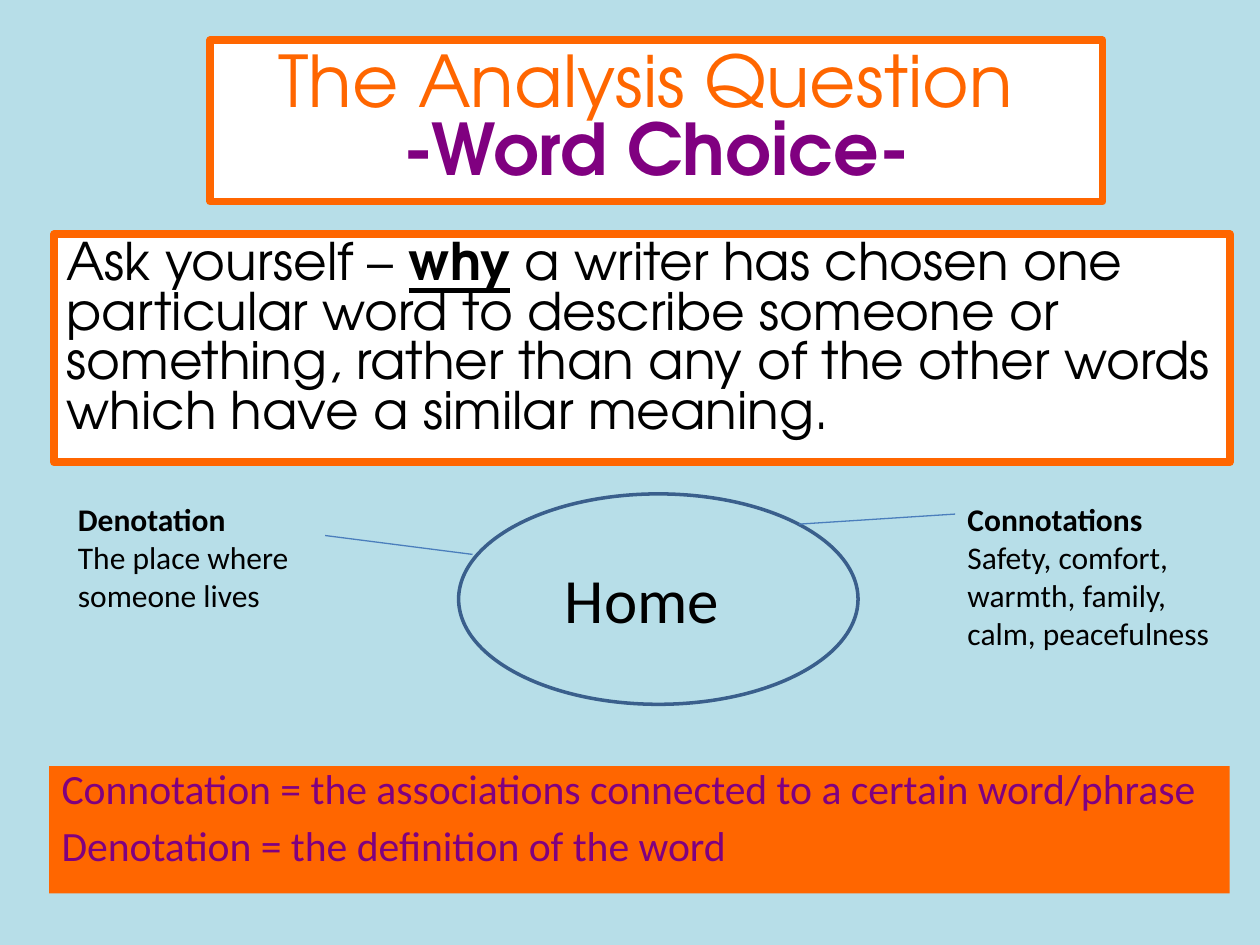
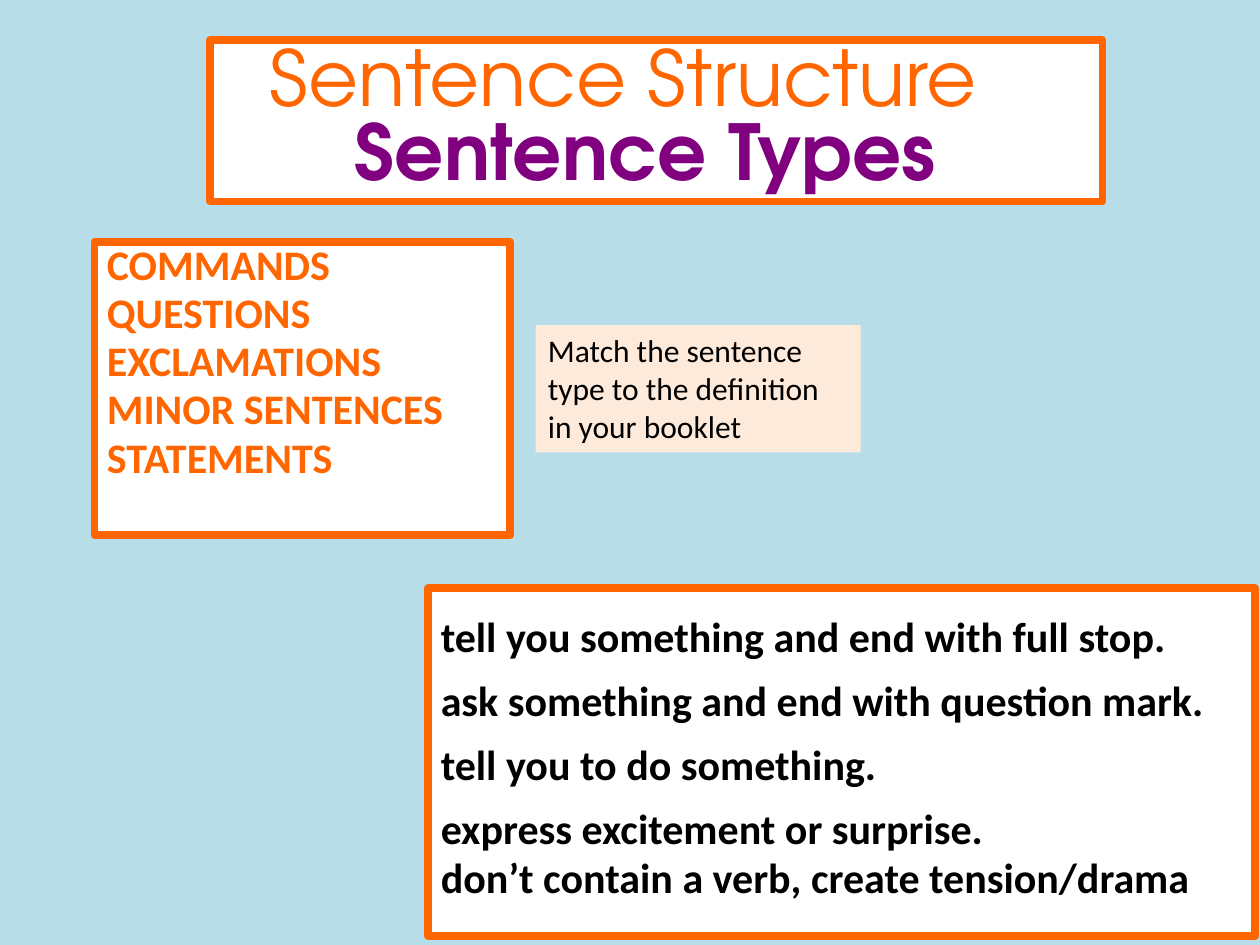
"""Two lesson slides on word choice and sentence types."""
from pptx import Presentation
from pptx.dml.color import RGBColor
from pptx.enum.shapes import MSO_CONNECTOR, MSO_SHAPE
from pptx.enum.text import MSO_ANCHOR, PP_ALIGN
from pptx.oxml.ns import qn
from pptx.util import Inches, Pt
from lxml import etree

SKY = RGBColor(0xB7, 0xDE, 0xE8)
ORANGE = RGBColor(0xFF, 0x66, 0x00)
PURPLE = RGBColor(0x80, 0x00, 0x80)
WHITE = RGBColor(0xFF, 0xFF, 0xFF)
BLACK = RGBColor(0x00, 0x00, 0x00)
PEACH = RGBColor(0xFD, 0xEA, 0xDA)
NAVY = RGBColor(0x3A, 0x5F, 0x8C)
BLUE = RGBColor(0x4B, 0x7E, 0xBC)
DISPLAY, BODY = "TeX Gyre Adventor", "Calibri"


def add_panel(slide, box, fill=WHITE, border=ORANGE, width=4.5, kind=MSO_SHAPE.RECTANGLE):
    panel = slide.shapes.add_shape(kind, *map(Inches, box))
    panel.shadow.inherit = False
    panel.fill.solid()
    panel.fill.fore_color.rgb = fill
    if border is None:
        panel.line.fill.background()
    else:
        panel.line.color.rgb = border
        panel.line.width = Pt(width)
    panel.text_frame.vertical_anchor = MSO_ANCHOR.TOP
    return panel


def write(shape, lines, size, color=BLACK, font=BODY, bold=False, spacing=None,
          gap=0, align=PP_ALIGN.LEFT):
    frame = shape.text_frame
    frame.word_wrap = True
    for index, line in enumerate(lines):
        paragraph = frame.add_paragraph() if index else frame.paragraphs[0]
        paragraph.text = line
        paragraph.alignment = align
        paragraph.line_spacing = spacing
        paragraph.space_before = Pt(gap if index else 0)
        paragraph.font.name = font
        paragraph.font.size = Pt(size)
        paragraph.font.bold = bold
        paragraph.font.color.rgb = color
    return frame.paragraphs


deck = Presentation()
deck.slide_width, deck.slide_height = Inches(10), Inches(7.5)

titles = [
    ("The Analysis Question", "-Word Choice-", 40.7, 0.27, 0.17),
    ("Sentence Structure", "Sentence Types", 44, 0.62, 0.35),
]
slides = []
for topic, focus, size, right_inset, focus_indent in titles:
    slide = deck.slides.add_slide(deck.slide_layouts[6])
    slide.background.fill.solid()
    slide.background.fill.fore_color.rgb = SKY
    title = add_panel(slide, (1.67, 0.32, 7.08, 1.28))
    title.text_frame.vertical_anchor = MSO_ANCHOR.MIDDLE
    title.text_frame.margin_right = Inches(right_inset)
    heading = write(title, [topic, focus], size, ORANGE, DISPLAY, spacing=0.8,
                    align=PP_ALIGN.CENTER)
    heading[1].font.color.rgb = PURPLE
    heading[1].font.bold = True
    heading[1]._p.get_or_add_pPr().set("marL", str(Inches(focus_indent)))
    slides.append(slide)
word_choice, sentence_types = slides

advice = add_panel(word_choice, (0.43, 1.86, 9.33, 1.81))
question = write(advice, ["Ask yourself – "], 29.6, font=DISPLAY, spacing=0.8)[0]
why = question.add_run()
why.text = "why"
why.font.bold = why.font.underline = True
question.add_run().text = (
    " a writer has chosen one particular word to describe someone or something, "
    "rather than any of the other words which have a similar meaning.")

definitions = add_panel(word_choice, (0.39, 6.08, 9.37, 1.01), ORANGE, None)
write(definitions, ["Connotation = the associations connected to a certain word/phrase",
                    "Denotation = the definition of the word"],
      23.8, PURPLE, spacing=0.8, gap=10)

add_panel(word_choice, (3.64, 3.92, 3.17, 1.67), SKY, NAVY, 2, MSO_SHAPE.OVAL)
home = word_choice.shapes.add_textbox(*map(Inches, (3.93, 4.4, 2.33, 0.71)))
write(home, ["Home"], 36, align=PP_ALIGN.CENTER)

meanings = [
    ((0.52, 3.92, 2.07, 1.01), "Denotation", "The place where someone lives",
     (3.75, 4.4, 2.58, 4.25)),
    ((7.58, 3.92, 2.18, 1.31), "Connotations",
     "Safety, comfort, warmth, family, calm, peacefulness", (6.34, 4.16, 7.58, 4.08)),
]
for box, term, meaning, ends in meanings:
    link = word_choice.shapes.add_connector(MSO_CONNECTOR.STRAIGHT, *map(Inches, ends))
    link.line.color.rgb = BLUE
    link.line.width = Pt(0.75)
    etree.SubElement(link._element.spPr, qn("a:effectLst"))
    note = word_choice.shapes.add_textbox(*map(Inches, box))
    write(note, [term, meaning], 18)[0].font.bold = True

types = add_panel(sentence_types, (0.75, 1.92, 3.3, 2.33))
write(types, ["COMMANDS", "QUESTIONS", "EXCLAMATIONS", "MINOR SENTENCES", "STATEMENTS"],
      24, ORANGE, bold=True, spacing=0.8, gap=4.5)

task = add_panel(sentence_types, (4.25, 2.58, 2.58, 1.01), PEACH, None)
write(task, ["Match the sentence type to the definition in your booklet"], 18)

descriptions = add_panel(sentence_types, (3.4, 4.67, 6.56, 2.76))
descriptions.text_frame.margin_top = Inches(0.25)
described = write(descriptions, [
    "tell you something and end with full stop.",
    "ask something and end with question mark.",
    "tell you to do something.",
    "express excitement or surprise.",
    "don’t contain a verb, create tension/drama",
], 24, bold=True, spacing=0.8, gap=13.7)
described[-1].space_before = Pt(4.5)

deck.save("out.pptx")
